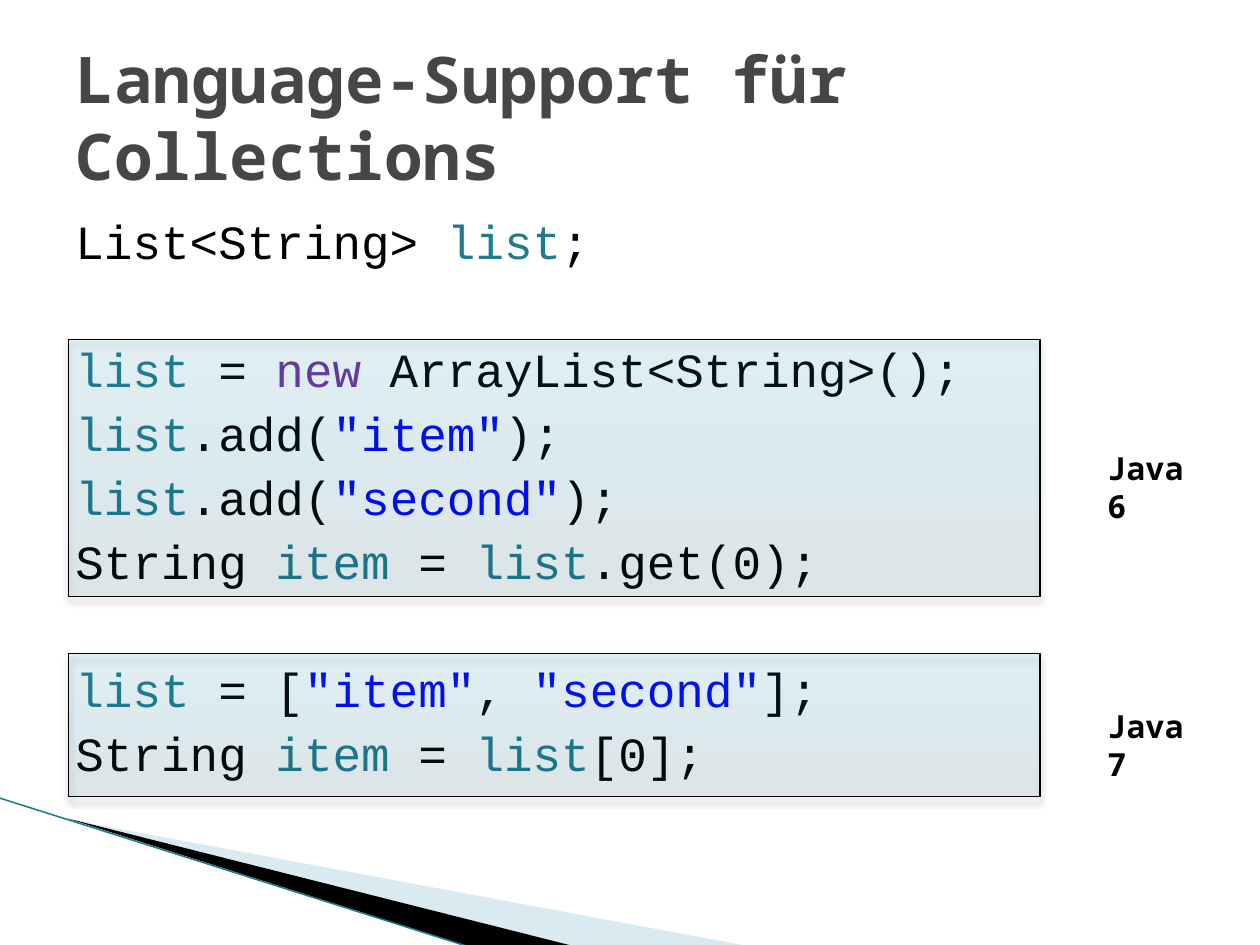
from dataclasses import dataclass
from typing import Any

from lxml.etree import SubElement
from pptx import Presentation
from pptx.dml.color import RGBColor
from pptx.enum.shapes import MSO_CONNECTOR, MSO_SHAPE
from pptx.enum.text import MSO_ANCHOR, MSO_AUTO_SIZE, PP_ALIGN
from pptx.oxml import parse_xml
from pptx.oxml.ns import nsdecls, qn
from pptx.util import Mm, Pt

EMU_PER_PX = 9144
SLIDE_SIZE = {"slide_width": Mm(280), "slide_height": Mm(210)}
BLACK = RGBColor(0x00, 0x00, 0x00)
GREY = RGBColor(0x46, 0x46, 0x46)
TEAL = RGBColor(0x22, 0x7A, 0x8F)
PURPLE = RGBColor(0x70, 0x30, 0xA0)
BLUE = RGBColor(0x00, 0x00, 0xFF)
PALE_BLUE = RGBColor(0xA0, 0xCB, 0xDC)
PANEL_STOPS = (
    (0, RGBColor(0x00, 0x53, 0x67)),
    (50, RGBColor(0x00, 0x86, 0xA7)),
    (70, RGBColor(0x0E, 0x9A, 0xBE)),
    (100, RGBColor(0x2C, 0xB9, 0xE3)),
)
CODE_FONT = {"name": "Courier New", "size": Pt(30), "bold": False}
TITLE_FONT = {"name": "Noto Sans Mono", "size": Pt(40.5), "bold": True}
VERSION_FONT = {"name": "Noto Sans Mono", "size": Pt(20), "bold": True}
LINE_GAP, BLOCK_GAP = Pt(4.4), Pt(44.6)


def px(length: int) -> int:
    return length * EMU_PER_PX


FRAME_FORMAT = {
    "auto_size": MSO_AUTO_SIZE.NONE, "word_wrap": True,
    "margin_left": px(11), "margin_right": px(11), "margin_top": px(6), "margin_bottom": px(6),
}


@dataclass(frozen=True)
class Token:
    text: str
    color: RGBColor = BLACK


@dataclass(frozen=True)
class Example:
    version: str
    top: int
    height: int
    version_top: int


@dataclass(frozen=True)
class Wedge:
    points: tuple[tuple[int, int], ...]
    color: RGBColor
    opacity: int


LIST = Token("list", TEAL)
ITEM = Token("item", TEAL)
FIRST_TEXT = Token('"item"', BLUE)
SECOND_TEXT = Token('"second"', BLUE)
CODE_BLOCKS = (
    ((Token("List<String> "), LIST, Token(";")),),
    (
        (LIST, Token(" = "), Token("new ", PURPLE), Token("ArrayList<String>();")),
        (LIST, Token(".add("), FIRST_TEXT, Token(");")),
        (LIST, Token(".add("), SECOND_TEXT, Token(");")),
        (Token("String "), ITEM, Token(" = "), LIST, Token(".get(0);")),
    ),
    (
        (LIST, Token(" = ["), FIRST_TEXT, Token(", "), SECOND_TEXT, Token("];")),
        (Token("String "), ITEM, Token(" = "), LIST, Token("[0];")),
    ),
)
EXAMPLES = (Example("Java 6", 297, 225, 388), Example("Java 7", 572, 125, 613))
WEDGES = (
    Wedge(((60, 717), (656, 828), (503, 828)), PALE_BLUE, 40),
    Wedge(((59, 716), (503, 828), (410, 828)), BLACK, 100),
)


def apply(target: Any, values: dict[str, Any]) -> None:
    for name, value in values.items():
        setattr(target, name, value)


def place(shape: Any, left: int, top: int, width: int, height: int) -> None:
    apply(shape, {"left": px(left), "top": px(top), "width": px(width), "height": px(height)})


def write(paragraph: Any, tokens: tuple[Token, ...], font: dict[str, Any]) -> None:
    for token in tokens:
        run = paragraph.add_run()
        run.text = token.text
        apply(run.font, font)
        run.font.color.rgb = token.color


def fill_title(title: Any) -> None:
    place(title, 55, 33, 992, 138)
    apply(title.text_frame, FRAME_FORMAT | {"vertical_anchor": MSO_ANCHOR.MIDDLE})
    heading = title.text_frame.paragraphs[0]
    heading.alignment = PP_ALIGN.LEFT
    write(heading, (Token("Language-Support für Collections", GREY),), TITLE_FONT)


def fill_code(body: Any) -> None:
    place(body, 55, 179, 992, 546)
    frame = body.text_frame
    apply(frame, FRAME_FORMAT | {"vertical_anchor": MSO_ANCHOR.TOP})
    for block_number, block in enumerate(CODE_BLOCKS):
        for line_number, tokens in enumerate(block):
            is_first = block_number == line_number == 0
            line = frame.paragraphs[0] if is_first else frame.add_paragraph()
            properties = line._p.get_or_add_pPr()
            properties.set("marL", "0")
            properties.set("indent", "0")
            SubElement(properties, qn("a:buNone"))
            gap = LINE_GAP if line_number else BLOCK_GAP
            line.space_before = Pt(0) if is_first else gap
            write(line, tokens, CODE_FONT)


def draw_wedge(shapes: Any, wedge: Wedge) -> None:
    builder = shapes.build_freeform(*wedge.points[0], scale=EMU_PER_PX)
    builder.add_line_segments(wedge.points[1:], close=True)
    outline = builder.convert_to_shape()
    outline.shadow.inherit = False
    outline.line.fill.background()
    outline.fill.solid()
    outline.fill.fore_color.rgb = wedge.color
    if wedge.opacity < 100:
        color = outline._element.spPr.find(qn("a:solidFill"))[0]
        SubElement(color, qn("a:alpha"), val=str(wedge.opacity * 1000))


def draw_edge(shapes: Any) -> None:
    edge = shapes.add_connector(MSO_CONNECTOR.STRAIGHT, px(-1), px(698), px(409), px(828))
    edge.line.color.rgb = TEAL
    edge.line.width = Pt(0.95)
    SubElement(edge._element.spPr, qn("a:effectLst"))


def draw_example(shapes: Any, example: Example) -> None:
    panel = shapes.add_shape(
        MSO_SHAPE.RECTANGLE, px(60), px(example.top), px(850), px(example.height))
    panel.line.color.rgb = BLACK
    panel.line.width = Pt(0.75)
    stops = "".join(
        f'<a:gs pos="{position * 1000}"><a:srgbClr val="{color}">'
        '<a:alpha val="10000"/></a:srgbClr></a:gs>'
        for position, color in PANEL_STOPS)
    properties = panel._element.spPr
    properties.find(qn("a:ln")).addprevious(parse_xml(
        f'<a:gradFill {nsdecls("a")} rotWithShape="1"><a:gsLst>{stops}</a:gsLst>'
        '<a:lin ang="16200000" scaled="0"/></a:gradFill>'))
    properties.append(parse_xml(
        f'<a:effectLst {nsdecls("a")}><a:outerShdw blurRad="{Pt(4)}" dist="{Pt(3)}" '
        f'dir="5400000" rotWithShape="0"><a:srgbClr val="{BLACK}">'
        '<a:alpha val="35000"/></a:srgbClr></a:outerShdw></a:effectLst>'))
    version = shapes.add_textbox(px(959), px(example.version_top), px(104), px(44))
    version.text_frame.word_wrap = True
    write(version.text_frame.paragraphs[0], (Token(example.version),), VERSION_FONT)


def main() -> None:
    deck = Presentation()
    apply(deck, SLIDE_SIZE)
    slide = deck.slides.add_slide(deck.slide_layouts[1])
    fill_title(slide.shapes.title)
    fill_code(slide.placeholders[1])
    for wedge in WEDGES:
        draw_wedge(slide.shapes, wedge)
    draw_edge(slide.shapes)
    for example in EXAMPLES:
        draw_example(slide.shapes, example)
    deck.save("out.pptx")


if __name__ == "__main__":
    main()
